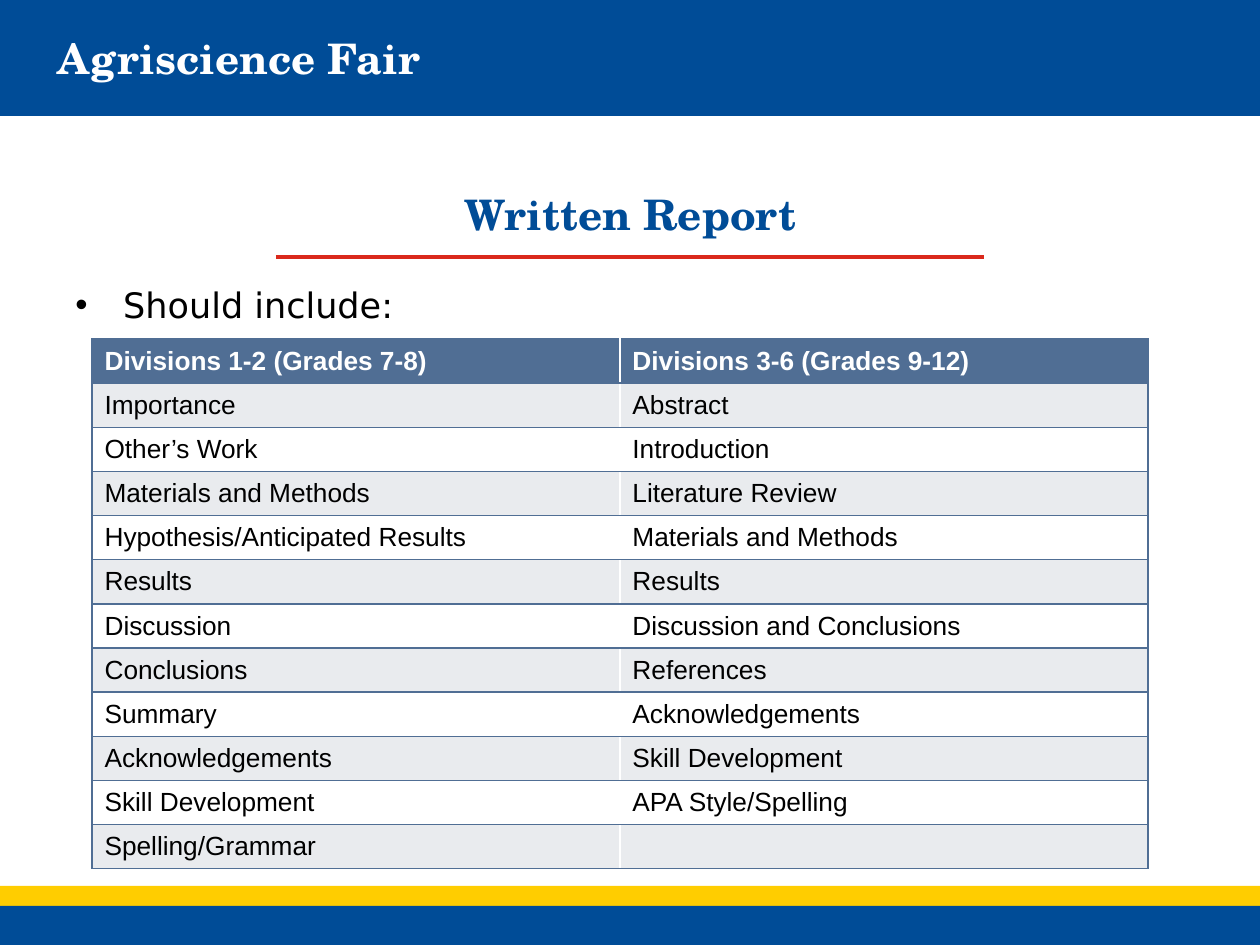
from pptx import Presentation
from pptx.dml.color import RGBColor
from pptx.enum.shapes import MSO_CONNECTOR, MSO_SHAPE
from pptx.enum.text import MSO_ANCHOR, PP_ALIGN
from pptx.oxml.ns import qn
from pptx.util import Inches, Pt
from lxml import etree

LEFT, CENTER = PP_ALIGN.LEFT, PP_ALIGN.CENTER
TOP, MIDDLE = MSO_ANCHOR.TOP, MSO_ANCHOR.MIDDLE
BLUE, YELLOW, RED = "004C97", "FFCD00", "DA291C"
SLATE, PALE, WHITE, BLACK = "506E94", "E9EBEE", "FFFFFF", "000000"
SERIF, SANS, TABLE_FONT = "TeX Gyre Schola", "DejaVu Sans", "Arial"


def color(value):
    return RGBColor.from_string(value)


def write(text_frame, text, font_name, size, text_color, bold=False, align=LEFT):
    text_frame.word_wrap = True
    paragraph = text_frame.paragraphs[0]
    paragraph.text = text
    paragraph.alignment = align
    paragraph.font.name = font_name
    paragraph.font.size = Pt(size)
    paragraph.font.bold = bold
    paragraph.font.color.rgb = color(text_color)


presentation = Presentation()
presentation.slide_width = Inches(10)
presentation.slide_height = Inches(7.5)
slide = presentation.slides.add_slide(presentation.slide_layouts[5])

title = slide.shapes.title
title.left, title.top = Inches(0.36), Inches(0.21)
title.width, title.height = Inches(9), Inches(1.07)
title.text_frame.vertical_anchor = TOP
write(title.text_frame, "Agriscience Fair", SERIF, 24, WHITE, bold=True)

bands = [(0, 0.92, BLUE), (7.03, 0.29, YELLOW), (7.19, 0.31, BLUE)]
for top, height, fill in bands:
    band = slide.shapes.add_shape(
        MSO_SHAPE.RECTANGLE, 0, Inches(top), Inches(10), Inches(height))
    band.shadow.inherit = False
    band.fill.solid()
    band.fill.fore_color.rgb = color(fill)
    band.line.fill.background()
    title.element.addprevious(band.element)

rule = slide.shapes.add_connector(
    MSO_CONNECTOR.STRAIGHT, Inches(2.19), Inches(2.04), Inches(7.81), Inches(2.04))
rule.line.color.rgb = color(RED)
rule.line.width = Pt(2)
etree.SubElement(rule.element.spPr, qn("a:effectLst"))
title.element.addprevious(rule.element)

heading = slide.shapes.add_textbox(
    Inches(2.39), Inches(1.45), Inches(5.23), Inches(0.94))
write(heading.text_frame, "Written Report", SERIF, 24, BLUE, bold=True, align=CENTER)

intro = slide.shapes.add_textbox(Inches(0.5), Inches(2.2), Inches(9), Inches(4.5))
properties = intro.text_frame.paragraphs[0]._p.get_or_add_pPr()
properties.set("marL", str(Inches(0.38)))
properties.set("indent", str(-Inches(0.38)))
etree.SubElement(properties, qn("a:buFont"), typeface="Arial")
etree.SubElement(properties, qn("a:buChar"), char="•")
write(intro.text_frame, "Should include:", SANS, 20, BLACK)

sections = [
    ("Divisions 1-2 (Grades 7-8)", "Divisions 3-6 (Grades 9-12)"),
    ("Importance", "Abstract"),
    ("Other’s Work", "Introduction"),
    ("Materials and Methods", "Literature Review"),
    ("Hypothesis/Anticipated Results", "Materials and Methods"),
    ("Results", "Results"),
    ("Discussion", "Discussion and Conclusions"),
    ("Conclusions", "References"),
    ("Summary", "Acknowledgements"),
    ("Acknowledgements", "Skill Development"),
    ("Skill Development", "APA Style/Spelling"),
    ("Spelling/Grammar", ""),
]
row_height = Inches(0.34)
table = slide.shapes.add_table(
    len(sections), 2, Inches(0.73), Inches(2.69), Inches(8.38),
    row_height * len(sections)).table
for row_index, row in enumerate(sections):
    table.rows[row_index].height = row_height
    header = row_index == 0
    fill = SLATE if header else PALE if row_index % 2 else WHITE
    for column_index, text in enumerate(row):
        cell = table.cell(row_index, column_index)
        write(cell.text_frame, text, TABLE_FONT, 15,
              WHITE if header else BLACK, bold=header)
        cell.vertical_anchor = MIDDLE
        outer_side = "a:lnR" if column_index else "a:lnL"
        cell_properties = cell._tc.get_or_add_tcPr()
        for side in (outer_side, "a:lnT", "a:lnB"):
            border = etree.SubElement(cell_properties, qn(side), w=str(Pt(1)))
            border_fill = etree.SubElement(border, qn("a:solidFill"))
            etree.SubElement(border_fill, qn("a:srgbClr"), val=SLATE)
        cell.fill.solid()
        cell.fill.fore_color.rgb = color(fill)

presentation.save("out.pptx")
